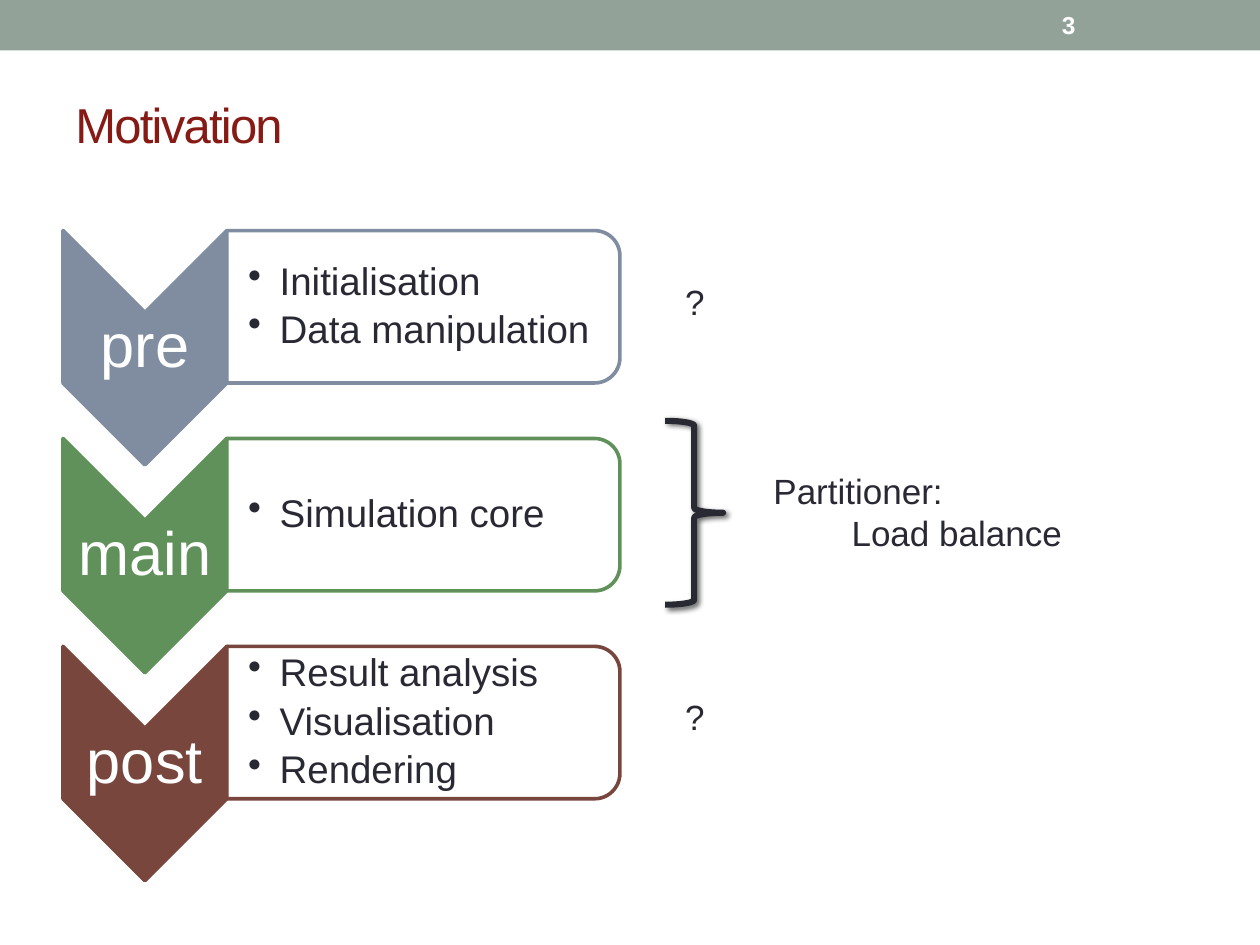
from dataclasses import dataclass

from lxml.etree import SubElement
from pptx import Presentation
from pptx.dml.color import RGBColor
from pptx.enum.shapes import MSO_SHAPE
from pptx.enum.text import MSO_ANCHOR, PP_ALIGN
from pptx.oxml.ns import qn
from pptx.shapes.autoshape import Shape
from pptx.slide import Slide
from pptx.text.text import TextFrame, _Paragraph as Para, _Run as Run
from pptx.util import Inches, Pt


@dataclass(frozen=True)
class Theme:
    font: str = "Arial"
    bar: str = "93A299"
    title: str = "861B15"
    ink: str = "292934"
    white: str = "FFFFFF"
    black: str = "000000"
    head: int = 28
    label: int = 35
    item: int = 22
    note: int = 20
    num: int = 14
    edge: float = 2.08
    brace: float = 3.5


@dataclass(frozen=True)
class Box:
    left: float
    top: float
    width: float
    height: float


@dataclass(frozen=True)
class Stage:
    name: str
    color: str
    items: tuple[str, ...]


@dataclass(frozen=True)
class Note:
    box: Box
    lines: tuple[str, ...]


THEME = Theme()
TOP = 1.83
STEP = 1.65
PAD = 0.02
STAGES = (
    Stage("pre", "808DA0", ("Initialisation", "Data manipulation")),
    Stage("main", "61915A", ("Simulation core",)),
    Stage("post", "79463D", ("Result analysis", "Visualisation", "Rendering")),
)
NOTES = (
    Note(Box(6.04, 3.68, 2.5, 0.77), ("Partitioner:", "Load balance")),
    Note(Box(5.34, 2.18, 0.36, 0.44), ("?",)),
    Note(Box(5.34, 5.47, 0.36, 0.44), ("?",)),
)


def place(box: Box) -> tuple[Inches, Inches, Inches, Inches]:
    return Inches(box.left), Inches(box.top), Inches(box.width), Inches(box.height)


def add_form(slide: Slide, kind: MSO_SHAPE, box: Box, fill: str | None,
             line: str | None = None, width: float = THEME.edge) -> Shape:
    form = slide.shapes.add_shape(kind, *place(box))
    form.shadow.inherit = False
    if fill:
        form.fill.solid()
        form.fill.fore_color.rgb = RGBColor.from_string(fill)
    else:
        form.fill.background()
    if line:
        form.line.color.rgb = RGBColor.from_string(line)
        form.line.width = Pt(width)
    else:
        form.line.fill.background()
    return form


def add_turned(slide: Slide, kind: MSO_SHAPE, box: Box, fill: str, line: str) -> Shape:
    left = box.left + (box.width - box.height) / 2
    top = box.top + (box.height - box.width) / 2
    form = add_form(slide, kind, Box(left, top, box.height, box.width), fill, line)
    form.rotation = 90
    return form


def add_text(slide: Slide, box: Box, wrap: bool = True,
             anchor: MSO_ANCHOR = MSO_ANCHOR.MIDDLE) -> TextFrame:
    frame = slide.shapes.add_textbox(*place(box)).text_frame
    frame.word_wrap = wrap
    frame.vertical_anchor = anchor
    return frame


def set_pads(frame: TextFrame, left: float = PAD) -> None:
    frame.margin_left = Inches(left)
    frame.margin_top = frame.margin_right = frame.margin_bottom = Inches(PAD)


def next_para(frame: TextFrame, index: int) -> Para:
    return frame.add_paragraph() if index else frame.paragraphs[0]


def add_run(para: Para, text: str, size: int, color: str, bold: bool = False) -> Run:
    run = para.add_run()
    run.text = text
    run.font.name = THEME.font
    run.font.size = Pt(size)
    run.font.bold = bold
    run.font.color.rgb = RGBColor.from_string(color)
    return run


def set_dent(para: Para, left: float, first: float = 0) -> None:
    props = para._p.get_or_add_pPr()
    props.set("marL", str(Inches(left)))
    props.set("indent", str(Inches(first)))


def add_stage(slide: Slide, stage: Stage, top: float) -> None:
    arrow = add_turned(slide, MSO_SHAPE.CHEVRON, Box(0.5, top, 1.3, 1.86),
                       stage.color, stage.color)
    arrow.adjustments[0] = 0.5
    frame = add_text(slide, Box(0.5, top + 0.65, 1.3, 0.56))
    set_pads(frame)
    para = frame.paragraphs[0]
    para.alignment = PP_ALIGN.CENTER
    para.line_spacing = 0.9
    add_run(para, stage.name, THEME.label, THEME.white)

    panel = add_turned(slide, MSO_SHAPE.ROUND_2_SAME_RECTANGLE,
                       Box(1.8, top, 3.12, 1.21), THEME.white, stage.color)
    tint = panel._element.spPr.find(qn("a:solidFill")).find(qn("a:srgbClr"))
    SubElement(tint, qn("a:alpha"), val="90000")
    frame = add_text(slide, Box(1.8, top + 0.06, 3.06, 1.09))
    set_pads(frame, 0.17)
    for index, item in enumerate(stage.items):
        para = next_para(frame, index)
        set_dent(para, 0.25, -0.25)
        SubElement(para._p.get_or_add_pPr(), qn("a:buChar"), char="•")
        para.line_spacing = 0.9
        para.space_after = Pt(4)
        add_run(para, item, THEME.item, THEME.ink)


def add_brace(slide: Slide, box: Box) -> None:
    brace = add_form(slide, MSO_SHAPE.RIGHT_BRACE, box, None, THEME.ink, THEME.brace)
    glow = brace._element.spPr.find(qn("a:effectLst"))
    shade = SubElement(glow, qn("a:outerShdw"), blurRad=str(Pt(3)), dist=str(Pt(2)),
                       dir="2700000", algn="tl", rotWithShape="0")
    tint = SubElement(shade, qn("a:srgbClr"), val=THEME.black)
    SubElement(tint, qn("a:alpha"), val="60000")


def add_note(slide: Slide, note: Note) -> None:
    frame = add_text(slide, note.box, False, MSO_ANCHOR.TOP)
    for index, line in enumerate(note.lines):
        para = next_para(frame, index)
        set_dent(para, 0.62 * index)
        add_run(para, line, THEME.note, THEME.ink)


def main() -> None:
    deck = Presentation()
    deck.slide_width, deck.slide_height = Inches(10), Inches(7.5)
    slide = deck.slides.add_slide(deck.slide_layouts[6])
    add_form(slide, MSO_SHAPE.RECTANGLE, Box(0, 0, 10, 0.4), THEME.bar)
    title = add_text(slide, Box(0.5, 0.58, 9, 0.81))
    run = add_run(title.paragraphs[0], "Motivation", THEME.head, THEME.title)
    run.font._element.set("spc", "-100")
    for index, stage in enumerate(STAGES):
        add_stage(slide, stage, TOP + STEP * index)
    count = add_text(slide, Box(8.33, 0.02, 1.17, 0.36))
    add_run(count.paragraphs[0], "3", THEME.num, THEME.white, True)
    add_brace(slide, Box(5.28, 3.34, 0.46, 1.46))
    for note in NOTES:
        add_note(slide, note)
    deck.save("out.pptx")


if __name__ == "__main__":
    main()
